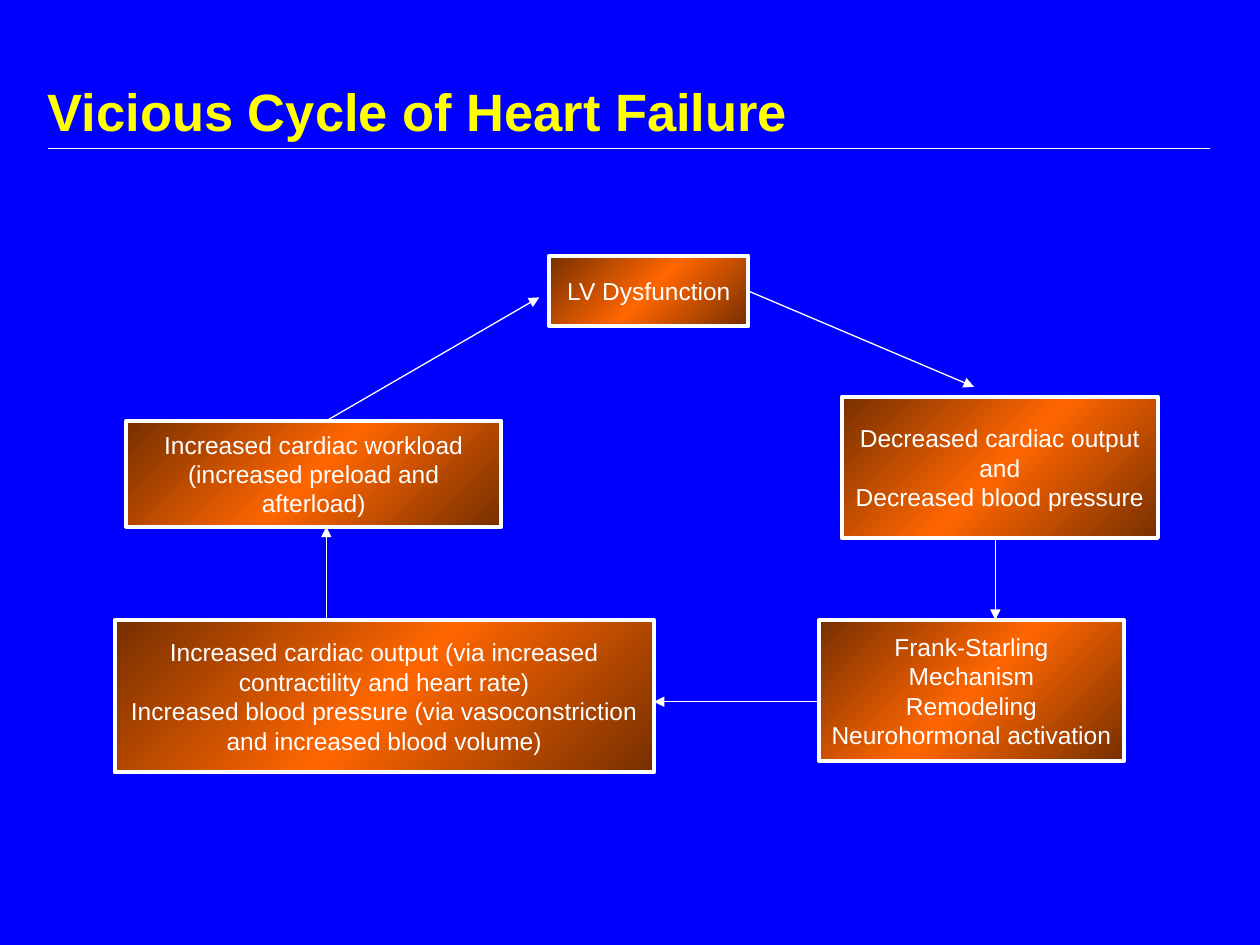
from copy import deepcopy
from dataclasses import dataclass

from lxml import etree
from pptx import Presentation
from pptx.dml.color import RGBColor
from pptx.enum.shapes import MSO_CONNECTOR, MSO_SHAPE
from pptx.enum.text import MSO_ANCHOR, MSO_AUTO_SIZE, PP_ALIGN
from pptx.oxml.ns import qn
from pptx.util import Inches, Pt

RECTANGLE = MSO_SHAPE.RECTANGLE
STRAIGHT = MSO_CONNECTOR.STRAIGHT
LEFT, CENTER = PP_ALIGN.LEFT, PP_ALIGN.CENTER
MIDDLE, BOTTOM = MSO_ANCHOR.MIDDLE, MSO_ANCHOR.BOTTOM
RIGHT_SIDE = 3
TITLE_ONLY = 5


@dataclass(frozen=True)
class Theme:
    font: str = "Arial"
    background: RGBColor = RGBColor(0x00, 0x00, 0xFF)
    title: RGBColor = RGBColor(0xFF, 0xFF, 0x00)
    white: RGBColor = RGBColor(0xFF, 0xFF, 0xFF)
    box_edge: RGBColor = RGBColor(0x76, 0x2F, 0x00)
    box_middle: RGBColor = RGBColor(0xFF, 0x66, 0x00)
    title_size: Pt = Pt(30)
    box_size: Pt = Pt(14)
    border: Pt = Pt(2.25)
    thin: Pt = Pt(0.75)


def write_text(frame, lines, *, font, size, color, bold=False, align=CENTER, anchor=MIDDLE):
    """Put each line in its own paragraph of the frame."""
    frame.word_wrap = True
    frame.auto_size = MSO_AUTO_SIZE.NONE
    frame.vertical_anchor = anchor
    for index, line in enumerate(lines):
        para = frame.add_paragraph() if index else frame.paragraphs[0]
        para.alignment = align
        span = para.add_run()
        span.text = line
        span.font.name = font
        span.font.size = size
        span.font.bold = bold
        span.font.color.rgb = color


class CyclePage:
    def __init__(self, deck, theme):
        self.theme = theme
        self.page = deck.slides.add_slide(deck.slide_layouts[TITLE_ONLY])
        background = self.page.background.fill
        background.solid()
        background.fore_color.rgb = theme.background

    def title(self, text, left, top, width, height):
        title = self.page.shapes.title
        title.left, title.top = Inches(left), Inches(top)
        title.width, title.height = Inches(width), Inches(height)
        write_text(title.text_frame, [text], font=self.theme.font, size=self.theme.title_size,
                   color=self.theme.title, bold=True, align=LEFT, anchor=BOTTOM)

    def box(self, lines, left, top, width, height):
        box = self.page.shapes.add_shape(
            RECTANGLE, Inches(left), Inches(top), Inches(width), Inches(height))
        box.shadow.inherit = False
        self.shade(box)
        box.line.color.rgb = self.theme.white
        box.line.width = self.theme.border
        write_text(box.text_frame, lines, font=self.theme.font,
                   size=self.theme.box_size, color=self.theme.white)
        return box

    def shade(self, box):
        """Diagonal gradient, dark at both corners and bright in the middle."""
        box.fill.gradient()
        box.fill.gradient_angle = 315
        stop_list = box._element.spPr.find(".//" + qn("a:gsLst"))
        stop_list.insert(1, deepcopy(stop_list[0]))
        edge, middle = self.theme.box_edge, self.theme.box_middle
        for stop, position, color in zip(box.fill.gradient_stops, (0, 0.5, 1), (edge, middle, edge)):
            stop.position = position
            stop.color.rgb = color

    def line(self, start, end, arrow=True):
        line = self.page.shapes.add_connector(STRAIGHT, *map(Inches, start + end))
        line.line.color.rgb = self.theme.white
        line.line.width = self.theme.thin
        properties = line._element.spPr
        if arrow:
            etree.SubElement(properties.find(qn("a:ln")), qn("a:tailEnd"), type="triangle")
        etree.SubElement(properties, qn("a:effectLst"))
        return line


def main():
    deck = Presentation()
    deck.slide_width, deck.slide_height = Inches(10), Inches(7.5)
    page = CyclePage(deck, Theme())

    page.title("Vicious Cycle of Heart Failure", 0.28, 0, 9.32, 1.18)
    page.line((0.38, 1.18), (9.6, 1.18), arrow=False)

    dysfunction = page.box(["LV Dysfunction"], 4.36, 2.03, 1.58, 0.56)
    page.box(["Decreased cardiac output", "and", "Decreased blood pressure"],
             6.68, 3.15, 2.51, 1.12)
    page.box(["Frank-Starling Mechanism", "Remodeling", "Neurohormonal activation"],
             6.5, 4.92, 2.42, 1.12)
    page.box(["Increased cardiac output (via increased",
              "contractility and heart rate)",
              "Increased blood pressure (via vasoconstriction and increased blood volume)"],
             0.91, 4.92, 4.28, 1.21)
    page.box(["Increased cardiac workload", "(increased preload and afterload)"],
             1, 3.34, 2.98, 0.84)

    page.line((7.9, 4.27), (7.9, 4.92))
    page.line((6.5, 5.57), (5.19, 5.57))
    page.line((2.59, 4.92), (2.59, 4.18))
    page.line((5.94, 2.31), (7.73, 3.07)).begin_connect(dysfunction, RIGHT_SIDE)
    page.line((2.59, 3.34), (4.28, 2.36))

    deck.save("out.pptx")


if __name__ == "__main__":
    main()
